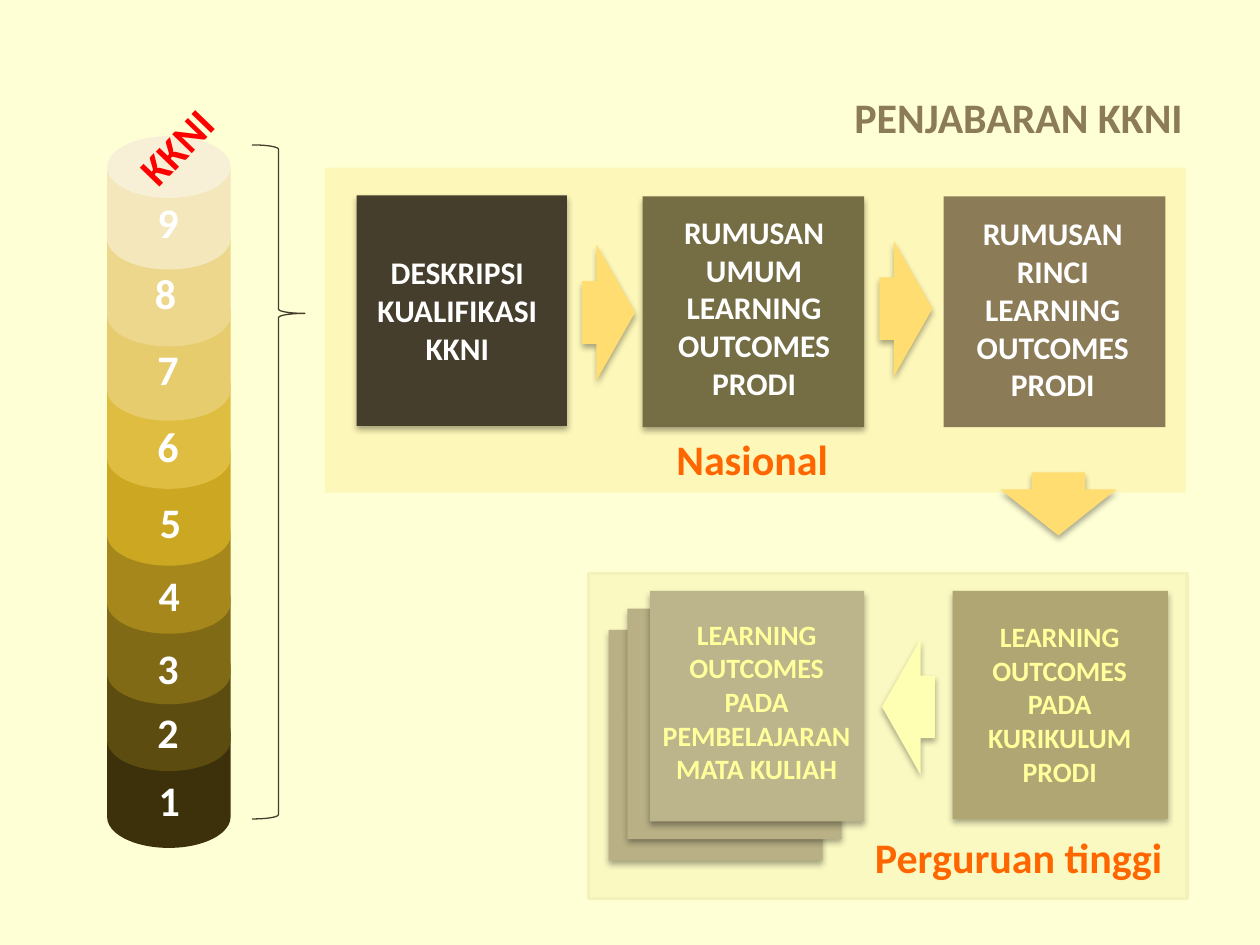
from dataclasses import dataclass

from lxml.etree import SubElement
from pptx import Presentation
from pptx.dml.color import RGBColor
from pptx.enum.shapes import MSO_SHAPE as Shape
from pptx.enum.text import MSO_ANCHOR as Anchor, MSO_AUTO_SIZE as AutoSize, PP_ALIGN as Align
from pptx.oxml.ns import qn
from pptx.util import Inches, Pt


@dataclass(frozen=True)
class Theme:
    font: str = "Calibri"
    heading: int = 24
    national: int = 18
    campus: int = 16
    background: str = "FFFFD6"
    title: str = "8B7B57"
    label: str = "FF6600"
    ladder_name: str = "FF0000"
    white: str = "FFFFFF"
    cream: str = "FFFF9B"
    arrow: str = "FFDD71"
    pale_arrow: str = "FFFFB3"
    national_panel: str = "F9E677"
    campus_panel: str = "FAF9C2"
    campus_border: str = "F4F1BA"
    description: str = "463E2C"
    general: str = "756D43"
    detailed: str = "8B7B57"
    curriculum: str = "B0A674"
    course_back: str = "B9B085"
    course_front: str = "BCB48A"
    levels: tuple = ("3C310A", "5D4C0F", "816A15", "A5871B", "CCA822",
                     "DFBD41", "E6CC6C", "ECD78C", "F3E7BB")


class SlideBuilder:
    COLUMNS, ROWS = 100, 75

    def __init__(self, deck, theme):
        self.theme = theme
        self.column = deck.slide_width / self.COLUMNS
        self.row = deck.slide_height / self.ROWS
        self.slide = deck.slides.add_slide(deck.slide_layouts[5])
        backdrop = self.slide.background.fill
        backdrop.solid()
        backdrop.fore_color.rgb = RGBColor.from_string(theme.background)

    def place(self, box):
        left, top, width, height = box
        return (round(left * self.column), round(top * self.row),
                round(width * self.column), round(height * self.row))

    def set_text(self, holder, text, size, color, wrap=True, align=Align.CENTER):
        frame = holder.text_frame
        frame.text = text
        frame.word_wrap = wrap
        frame.auto_size = AutoSize.SHAPE_TO_FIT_TEXT
        frame.vertical_anchor = Anchor.TOP
        paragraph = frame.paragraphs[0]
        paragraph.alignment = align
        font = paragraph.font
        font.name, font.size, font.bold = self.theme.font, Pt(size), True
        font.color.rgb = RGBColor.from_string(color)

    def title(self, text, box):
        holder = self.slide.shapes.title
        holder.left, holder.top, holder.width, holder.height = self.place(box)
        self.set_text(holder, text, self.theme.heading, self.theme.title, wrap=False)

    def label(self, text, box, size, color, rotation=0, **layout):
        holder = self.slide.shapes.add_textbox(*self.place(box))
        holder.rotation = rotation
        self.set_text(holder, text, size, color, **layout)

    def shape(self, kind, box, fill=None, line=None, weight=1, adjust=(), shadow=False):
        item = self.slide.shapes.add_shape(kind, *self.place(box))
        for index, value in enumerate(adjust):
            item.adjustments[index] = value
        if fill:
            item.fill.solid()
            item.fill.fore_color.rgb = RGBColor.from_string(fill)
        else:
            item.fill.background()
        if line:
            item.line.color.rgb = RGBColor.from_string(line)
            item.line.width = Pt(weight)
        else:
            item.line.fill.background()
        item.shadow.inherit = False
        if shadow:
            self.drop_shadow(item)
        return item

    def drop_shadow(self, item):
        effects = item._element.spPr.find(qn("a:effectLst"))
        outer = SubElement(effects, qn("a:outerShdw"), blurRad=str(Pt(3.5)),
                           dist=str(Pt(2.2)), dir="5400000", rotWithShape="0")
        black = SubElement(outer, qn("a:srgbClr"), val="000000")
        SubElement(black, qn("a:alpha"), val="32000")

    def panel(self, box, fill, line=None, opacity=100):
        item = self.shape(Shape.RECTANGLE, box, fill, line, weight=2)
        if opacity < 100:
            color = item._element.spPr.find(qn("a:solidFill")).find(qn("a:srgbClr"))
            SubElement(color, qn("a:alpha"), val=str(opacity * 1000))

    def card(self, box, fill, shadow=True):
        self.shape(Shape.RECTANGLE, box, fill, shadow=shadow)

    def caption(self, text, box, fill, size, color):
        self.set_text(self.shape(Shape.RECTANGLE, box, fill), text, size, color)

    def arrow(self, box, fill, rotation=0):
        item = self.shape(Shape.RIGHT_ARROW, box, fill, adjust=(0.46, 0.73), shadow=True)
        item.rotation = rotation

    def ladder(self, steps):
        for (top, height, *_), fill in zip(steps, self.theme.levels):
            self.shape(Shape.CAN, (8.5, top, 9.8, height), fill, adjust=(0.5,))
        for level, (_, _, left, top) in enumerate(steps, start=1):
            self.label(str(level), (left, top, 3.9, 5.8), self.theme.heading,
                       self.theme.white, align=Align.LEFT)


def main():
    deck = Presentation()
    deck.slide_width, deck.slide_height = Inches(10), Inches(7.5)
    theme = Theme()
    page = SlideBuilder(deck, theme)
    page.title("PENJABARAN KKNI", (66.7, 6.8, 28.3, 5))

    page.panel((46.7, 45.5, 47.5, 25.8), theme.campus_panel, theme.campus_border)
    page.label("Perguruan tinggi", (68.3, 65.5, 25.1, 5), theme.heading, theme.label, wrap=False)
    page.panel((25.8, 13.3, 68.3, 25.8), theme.national_panel, opacity=30)
    page.label("Nasional", (52.6, 33.9, 14.2, 5), theme.heading, theme.label, wrap=False)

    page.ladder([
        (55.5, 11.8, 11.6, 61), (50.3, 10.9, 11.5, 55.6), (44.9, 11, 11.5, 50.5),
        (39.8, 10.5, 11.6, 44.7), (33.4, 11.5, 11.7, 38.9), (28, 10.8, 11.5, 32.9),
        (22.1, 11.3, 11.5, 26.8), (16.4, 11.1, 11.3, 20.7), (10.8, 10.6, 11.5, 15.1),
    ])
    page.label("KKNI", (9.3, 9, 9.9, 5.8), theme.heading, theme.ladder_name, rotation=-46)
    page.shape(Shape.RIGHT_BRACE, (20, 11.5, 4.2, 53.5), line=theme.description,
               weight=0.75, adjust=(0.08, 0.25))

    national_cards = [
        ("DESKRIPSI KUALIFIKASI KKNI", theme.description, True,
         (28.3, 15.5, 16.7, 18.3), (28.8, 19.6, 15, 10.1)),
        ("RUMUSAN UMUM LEARNING OUTCOMES PRODI", theme.general, True,
         (51, 15.6, 17.6, 18.3), (51.5, 16.4, 16.7, 16.2)),
        ("RUMUSAN RINCI LEARNING OUTCOMES PRODI", theme.detailed, False,
         (74.9, 15.6, 17.6, 18.3), (75.6, 16.5, 15.9, 16.2)),
    ]
    for text, fill, shadow, box, inner in national_cards:
        page.card(box, fill, shadow)
        page.caption(text, inner, fill, theme.national, theme.white)
    page.arrow((46.2, 19.4, 4.2, 10.8), theme.arrow)
    page.arrow((69.8, 19.1, 4.2, 10.8), theme.arrow)
    page.arrow((81.5, 35.4, 5, 9.2), theme.arrow, rotation=90)

    page.card((75.6, 46.9, 17.1, 18.1), theme.curriculum)
    page.caption("LEARNING OUTCOMES PADA KURIKULUM PRODI", (76.4, 48.7, 15.4, 14.5),
                 theme.curriculum, theme.campus, theme.cream)
    for left, top, fill in [(48.3, 50, theme.course_back), (49.8, 48.3, theme.course_back),
                            (51.6, 46.9, theme.course_front)]:
        page.card((left, top, 17, 18.3), fill)
    page.label("LEARNING OUTCOMES PADA PEMBELAJARAN MATA KULIAH",
               (51.5, 48.5, 17.1, 14.5), theme.campus, theme.cream)
    page.arrow((70, 50.7, 4.2, 10.8), theme.pale_arrow, rotation=180)

    deck.save("out.pptx")


if __name__ == "__main__":
    main()
